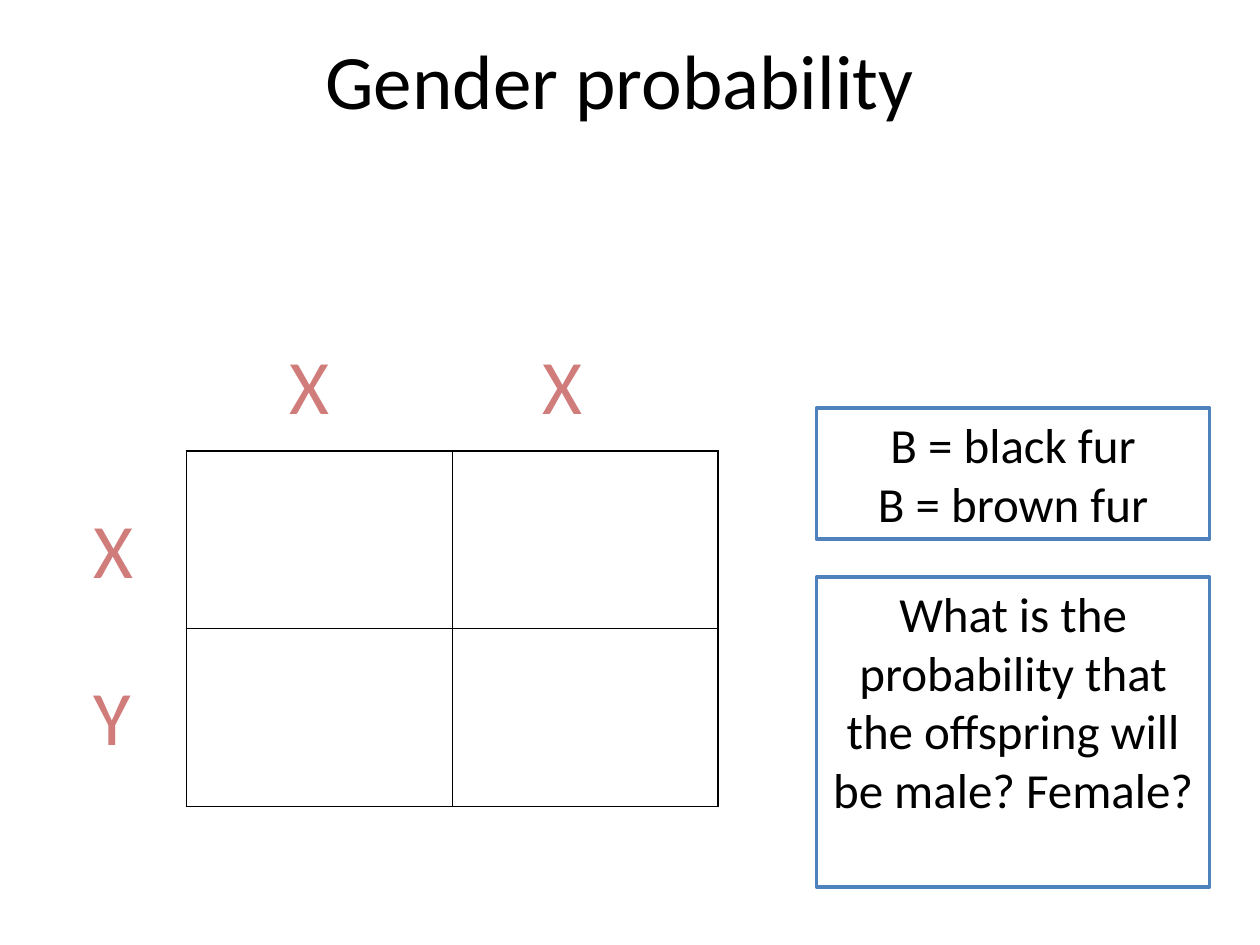
from dataclasses import dataclass

from lxml.etree import SubElement
from pptx import Presentation
from pptx.dml.color import RGBColor
from pptx.enum.shapes import MSO_SHAPE
from pptx.enum.text import MSO_ANCHOR, PP_ALIGN
from pptx.oxml.ns import qn
from pptx.util import Inches, Pt


@dataclass(frozen=True)
class Theme:
    """Colours, font and type sizes of the deck."""
    font: str = "Calibri"
    ink: str = "000000"
    allele: str = "D07C7A"
    paper: str = "FFFFFF"
    frame: str = "4F81BD"
    large: int = 44
    body: int = 28
    frame_width: int = 2
    grid_width: int = 1


THEME = Theme()
SQUARE_LEFT, SQUARE_TOP = 1.48, 3.58
CELL_WIDTH, CELL_HEIGHT = 2.11, 1.41
LETTER_WIDTH, LETTER_HEIGHT = 0.71, 0.84
LETTER_STEP_X, LETTER_STEP_Y = 2.01, 1.33
PANEL_LEFT, PANEL_WIDTH = 6.48, 3.12


def set_values(target, values):
    """Set each named attribute of the target."""
    for name, value in values.items():
        setattr(target, name, value)


def write(shape, lines, size, color, align, anchor=MSO_ANCHOR.TOP):
    """Fill a shape with one formatted paragraph for each line."""
    frame = shape.text_frame
    set_values(frame, {"word_wrap": True, "vertical_anchor": anchor})
    frame.text = "\n".join(lines)
    for para in frame.paragraphs:
        para.alignment = align
        for span in para.runs:
            set_values(span.font, {"name": THEME.font, "size": Pt(size)})
            span.font.color.rgb = RGBColor.from_string(color)


def add_title(page, text):
    """Place and format the title placeholder."""
    title = page.shapes.title
    set_values(title, {"left": Inches(0.42), "top": 0,
                       "width": Inches(9), "height": Inches(1.25)})
    write(title, [text], THEME.large, THEME.ink, PP_ALIGN.CENTER, MSO_ANCHOR.MIDDLE)


def add_borders(cell):
    """Draw a thin line on all four sides of a cell."""
    properties = cell._tc.get_or_add_tcPr()
    for position, side in enumerate(("lnL", "lnR", "lnT", "lnB")):
        line = properties.makeelement(qn(f"a:{side}"), {"w": str(Pt(THEME.grid_width))})
        fill = SubElement(line, qn("a:solidFill"))
        SubElement(fill, qn("a:srgbClr"), val=THEME.ink)
        properties.insert(position, line)


def add_punnett_square(page, rows, columns):
    """Add the empty table for the offspring."""
    table = page.shapes.add_table(
        rows, columns, Inches(SQUARE_LEFT), Inches(SQUARE_TOP),
        Inches(columns * CELL_WIDTH), Inches(rows * CELL_HEIGHT)).table
    set_values(table, {"first_row": False, "horz_banding": False})
    for cell in table.iter_cells():
        cell.fill.background()
        add_borders(cell)


def add_letter(page, letter, left, top):
    """Add one chromosome letter beside the square."""
    box = page.shapes.add_textbox(Inches(left), Inches(top),
                                  Inches(LETTER_WIDTH), Inches(LETTER_HEIGHT))
    write(box, [letter], THEME.large, THEME.allele, PP_ALIGN.LEFT)


def add_panel(page, lines, top, height):
    """Add a framed text panel in the right column."""
    panel = page.shapes.add_shape(MSO_SHAPE.RECTANGLE, Inches(PANEL_LEFT), Inches(top),
                                  Inches(PANEL_WIDTH), Inches(height))
    panel.shadow.inherit = False
    panel.fill.solid()
    panel.fill.fore_color.rgb = RGBColor.from_string(THEME.paper)
    panel.line.color.rgb = RGBColor.from_string(THEME.frame)
    panel.line.width = Pt(THEME.frame_width)
    write(panel, lines, THEME.body, THEME.ink, PP_ALIGN.CENTER)


def main():
    """Build the slide and save the deck."""
    deck = Presentation()
    set_values(deck, {"slide_width": Inches(10), "slide_height": Inches(7.5)})
    page = deck.slides.add_slide(deck.slide_layouts[5])
    add_title(page, "Gender probability")
    add_punnett_square(page, 2, 2)
    for column, letter in enumerate("XX"):
        add_letter(page, letter, 2.2 + column * LETTER_STEP_X, 2.63)
    for row, letter in enumerate("XY"):
        add_letter(page, letter, 0.64, 3.93 + row * LETTER_STEP_Y)
    add_panel(page, ["B = black fur", "B = brown fur"], 3.24, 1.04)
    add_panel(page, ["What is the probability that the offspring will be male? Female?"],
              4.58, 2.46)
    deck.save("out.pptx")


if __name__ == "__main__":
    main()
